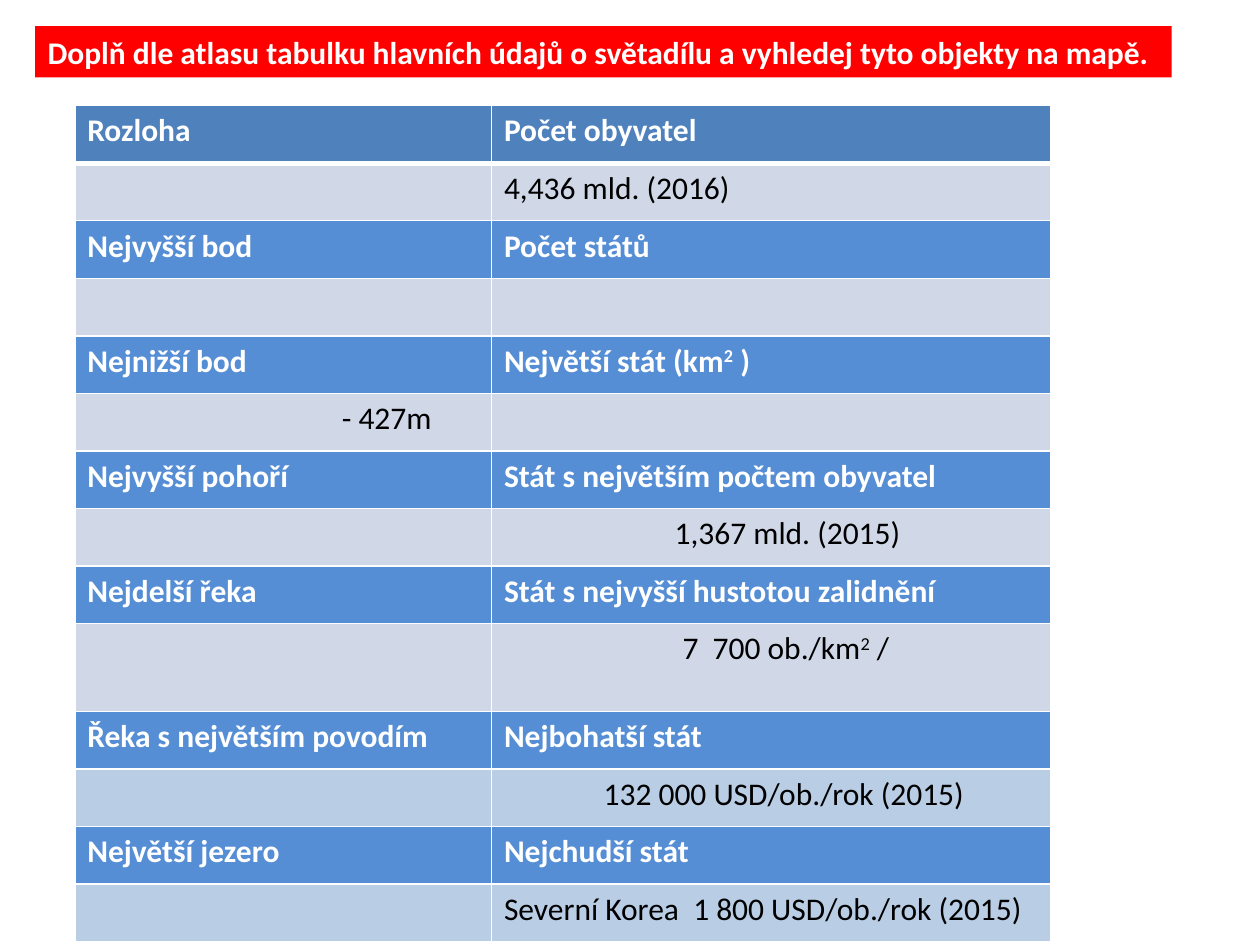
from lxml import etree
from pptx import Presentation
from pptx.dml.color import RGBColor
from pptx.enum.shapes import MSO_SHAPE
from pptx.enum.text import MSO_ANCHOR, MSO_AUTO_SIZE, PP_ALIGN
from pptx.oxml.ns import qn
from pptx.util import Cm, Pt

RECT = MSO_SHAPE.RECTANGLE
MIDDLE = MSO_ANCHOR.MIDDLE
LEFT = PP_ALIGN.LEFT
GROW = MSO_AUTO_SIZE.SHAPE_TO_FIT_TEXT
rgb = RGBColor.from_string


def write(frame, text, color="000000", bold=False, size=18, font="Calibri"):
    """Write one paragraph; parts between ^ marks are superscript."""
    para = frame.paragraphs[0]
    para.alignment = LEFT
    for i, part in enumerate(text.split("^")):
        run = para.add_run()
        run.text = part
        run.font.name = font
        run.font.size = Pt(size)
        run.font.bold = bold
        run.font.color.rgb = rgb(color)
        if i % 2:
            run._r.get_or_add_rPr().set("baseline", "30000")


def edge(cell, side, width, color="FFFFFF"):
    """Add a cell border; call in the order L, R, T, B and before the fill."""
    line = etree.SubElement(cell._tc.get_or_add_tcPr(), qn(f"a:ln{side}"), w=str(Pt(width)))
    fill = etree.SubElement(line, qn("a:solidFill"))
    etree.SubElement(fill, qn("a:srgbClr"), val=color)


prs = Presentation()
prs.slide_width, prs.slide_height = Cm(25.4), Cm(19.05)
slide = prs.slides.add_slide(prs.slide_layouts[6])

title = slide.shapes.add_shape(RECT, Cm(0.71), Cm(0.53), Cm(22.91), Cm(1.03))
title.shadow.inherit = False
title.fill.solid()
title.fill.fore_color.rgb = rgb("FF0000")
title.line.fill.background()
frame = title.text_frame
frame.word_wrap = False
frame.auto_size = GROW
frame.vertical_anchor = MIDDLE
write(frame, "Doplň dle atlasu tabulku hlavních údajů o světadílu a vyhledej tyto objekty na mapě.",
      color="FFFFFF", bold=True)

# Each pair of rows: two headings, then two answers with their left margins in cm
PAD = 0.25
facts = [
    ("Rozloha", "Počet obyvatel", ("", PAD), ("4,436 mld. (2016)", PAD)),
    ("Nejvyšší bod", "Počet států", ("", PAD), ("", PAD)),
    ("Nejnižší bod", "Největší stát (km^2^ )", ("- 427m", 5.38), ("", PAD)),
    ("Nejvyšší pohoří", "Stát s největším počtem obyvatel", ("", PAD), ("1,367 mld. (2015)", 3.69)),
    ("Nejdelší řeka", "Stát s nejvyšší hustotou zalidnění", ("", PAD), ("7  700 ob./km^2^ /", 3.85)),
    ("Řeka s největším povodím", "Nejbohatší stát", ("", PAD), ("132 000 USD/ob./rok (2015)", 2.26)),
    ("Největší jezero", "Nejchudší stát", ("", PAD),
     ("Severní Korea  1 800 USD/ob./rok (2015)", PAD)),
]
rows = []
for left, right, *notes in facts:
    rows += [[(left, PAD), (right, PAD)], notes]

table = slide.shapes.add_table(len(rows), 2, Cm(1.51), Cm(2.13), Cm(19.67), Cm(16.24)).table
for col, width in zip(table.columns, (8.4, 11.27)):
    col.width = Cm(width)

for r, row in enumerate(rows):
    table.rows[r].height = Cm(1.77 if r == 9 else 1.16)
    head = r % 2 == 0
    if head:
        shade = "558ED5" if r else "4F81BD"
    else:
        shade = "D0D8E8" if r < 10 else "B9CDE5"
    for c, (text, gap) in enumerate(row):
        cell = table.cell(r, c)
        for side in "LRTB":
            thick = (r, side) in ((0, "B"), (1, "T"))
            edge(cell, side, 3 if thick else 1)
        cell.fill.solid()
        cell.fill.fore_color.rgb = rgb(shade)
        cell.margin_left = Cm(gap)
        if text:
            write(cell.text_frame, text, color="FFFFFF" if head else "000000", bold=head)

prs.save("out.pptx")
